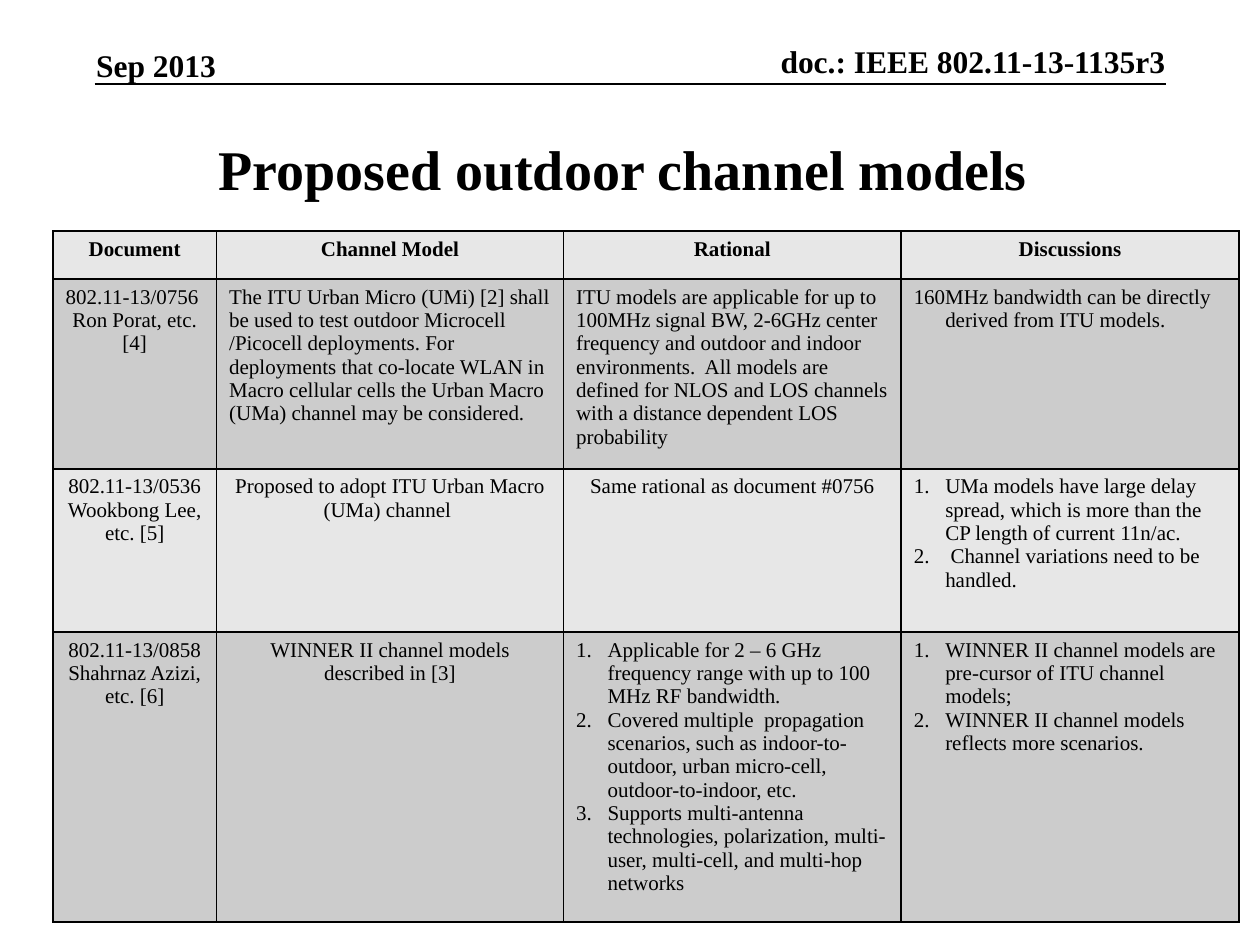
from lxml.etree import SubElement
from pptx import Presentation
from pptx.dml.color import RGBColor
from pptx.enum.shapes import MSO_CONNECTOR
from pptx.enum.text import MSO_ANCHOR as Anchor, PP_ALIGN as Align
from pptx.oxml.ns import qn
from pptx.util import Pt

FONT = "Times New Roman"
COLOURS = {"black": "000000", "light": "E7E7E7", "dark": "CCCCCC"}
COLUMN_WIDTHS = [93.6, 198.2, 193, 193]
ROW_HEIGHTS = [27.5, 108.5, 93.3, 165.7]
HANGING = 18

# Each cell is a layout (heading, centred, left, hanging or numbered) and its paragraphs.
ROWS = [
    [("heading", [name]) for name in ("Document", "Channel Model", "Rational", "Discussions")],
    [
        ("centred", ["802.11-13/0756  ", "Ron Porat, etc. [4]"]),
        ("left", ["The ITU Urban Micro (UMi) [2] shall be used to test outdoor Microcell "
                  "/Picocell deployments. For deployments that co-locate WLAN in Macro "
                  "cellular cells the Urban Macro (UMa) channel may be considered."]),
        ("left", ["ITU models are applicable for up to 100MHz signal BW, 2-6GHz center "
                  "frequency and outdoor and indoor environments.  All models are defined "
                  "for NLOS and LOS channels with a distance dependent LOS probability"]),
        ("hanging", ["160MHz bandwidth can be directly derived from ITU models."]),
    ],
    [
        ("centred", ["802.11-13/0536", "Wookbong Lee, etc. [5]"]),
        ("centred", ["Proposed to adopt ITU Urban Macro (UMa) channel "]),
        ("centred", ["Same rational as document #0756"]),
        ("numbered", ["UMa models have large delay spread, which is more than the CP length "
                      "of current 11n/ac.",
                      " Channel variations need to be handled."]),
    ],
    [
        ("centred", ["802.11-13/0858", "Shahrnaz Azizi, etc. [6]"]),
        ("centred", ["WINNER II channel models described in [3]"]),
        ("numbered", ["Applicable for 2 – 6 GHz frequency range with up to 100 MHz RF bandwidth.",
                      "Covered multiple  propagation scenarios, such as indoor-to-outdoor, "
                      "urban micro-cell, outdoor-to-indoor, etc.",
                      "Supports multi-antenna technologies, polarization, multi-user, "
                      "multi-cell, and multi-hop networks"]),
        ("numbered", ["WINNER II channel models are pre-cursor of ITU channel models;",
                      "WINNER II channel models reflects more scenarios."]),
    ],
]


def colour(name):
    return RGBColor.from_string(COLOURS[name])


def set_font(paragraph, size, bold):
    font = paragraph.font
    font.name, font.size, font.bold = FONT, Pt(size), bold
    font.color.rgb = colour("black")


def add_text(slide, text, box, size, align, anchor=Anchor.BOTTOM, wrap=False):
    frame = slide.shapes.add_textbox(*map(Pt, box)).text_frame
    frame.word_wrap = wrap
    frame.vertical_anchor = anchor
    frame.margin_left = frame.margin_right = frame.margin_top = frame.margin_bottom = 0
    paragraph = frame.paragraphs[0]
    paragraph.text = text
    paragraph.alignment = align
    set_font(paragraph, size, True)


def add_rule(slide, left, right, y):
    line = slide.shapes.add_connector(MSO_CONNECTOR.STRAIGHT, Pt(left), Pt(y), Pt(right), Pt(y))
    line.line.color.rgb = colour("black")
    line.line.width = Pt(1)
    SubElement(line._element.spPr, qn("a:effectLst"))


def add_borders(cell):
    properties = cell._tc.get_or_add_tcPr()
    for position, side in enumerate(("lnL", "lnR", "lnT", "lnB")):
        border = SubElement(properties, qn(f"a:{side}"), w=str(Pt(1)))
        fill = SubElement(border, qn("a:solidFill"))
        SubElement(fill, qn("a:srgbClr"), val=COLOURS["black"])
        properties.insert(position, border)  # borders must precede the fill


def fill_cell(cell, layout, texts, shade):
    cell.fill.solid()
    cell.fill.fore_color.rgb = colour(shade)
    add_borders(cell)
    frame = cell.text_frame
    frame.text = "\n".join(texts)
    for paragraph in frame.paragraphs:
        set_font(paragraph, 12, layout == "heading")
        paragraph.alignment = Align.CENTER if layout in ("heading", "centred") else Align.LEFT
        if layout in ("hanging", "numbered"):
            properties = paragraph._p.get_or_add_pPr()
            properties.set("marL", str(Pt(HANGING)))
            properties.set("indent", str(-Pt(HANGING)))
            if layout == "numbered":
                numbering = SubElement(properties, qn("a:buAutoNum"), type="arabicPeriod")
                properties.insert(0, numbering)  # numbering must precede the font


def add_model_table(slide):
    table = slide.shapes.add_table(
        len(ROWS), len(COLUMN_WIDTHS), Pt(30.2), Pt(132),
        Pt(sum(COLUMN_WIDTHS)), Pt(sum(ROW_HEIGHTS))).table
    for column, width in zip(table.columns, COLUMN_WIDTHS):
        column.width = Pt(width)
    for index, (row, height, contents) in enumerate(zip(table.rows, ROW_HEIGHTS, ROWS)):
        row.height = Pt(height)
        shade = "dark" if index % 2 else "light"
        for cell, (layout, texts) in zip(row.cells, contents):
            fill_cell(cell, layout, texts, shade)


def main():
    presentation = Presentation()
    presentation.slide_width, presentation.slide_height = Pt(720), Pt(540)
    slide = presentation.slides.add_slide(presentation.slide_layouts[6])
    add_text(slide, "doc.: IEEE 802.11-13-1135r3", (407.5, 24, 258.5, 21.5), 18, Align.RIGHT)
    add_rule(slide, 54, 666, 48)
    add_text(slide, "Proposed outdoor channel models ", (54, 54, 612, 84), 32,
             Align.CENTER, Anchor.MIDDLE, wrap=True)
    add_text(slide, "Sep 2013", (54.9, 26.4, 69, 21.5), 18, Align.LEFT)
    add_model_table(slide)
    presentation.save("out.pptx")


if __name__ == "__main__":
    main()
